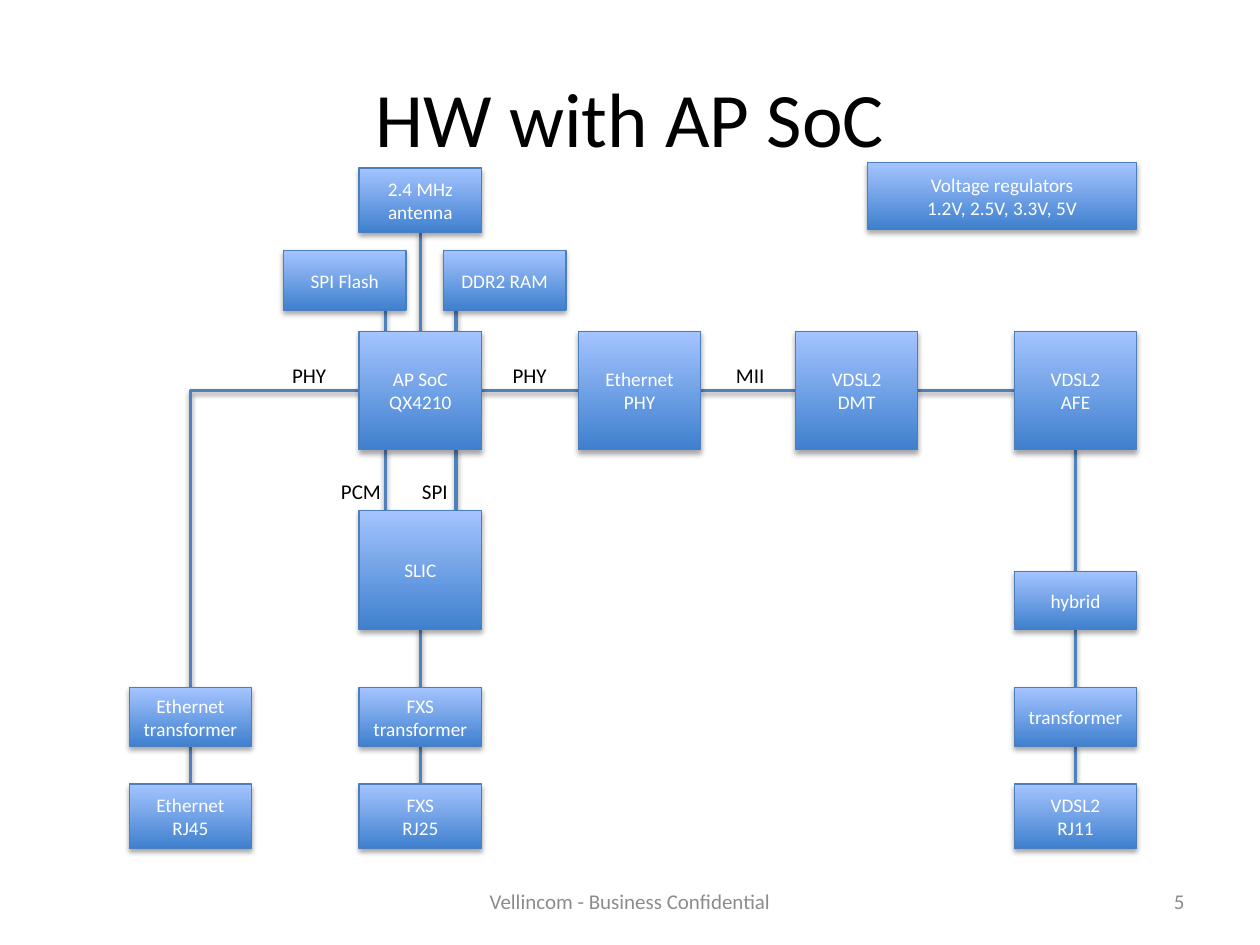
"""Build the hardware block diagram slide for the AP SoC design."""
from dataclasses import dataclass
from typing import Any

from lxml import etree
from pptx import Presentation
from pptx.dml.color import RGBColor
from pptx.enum.shapes import MSO_CONNECTOR, MSO_SHAPE
from pptx.enum.text import MSO_ANCHOR, PP_ALIGN
from pptx.oxml.ns import qn
from pptx.util import Pt

RECTANGLE = MSO_SHAPE.RECTANGLE
STRAIGHT, ELBOW = MSO_CONNECTOR.STRAIGHT, MSO_CONNECTOR.ELBOW
TOP, MIDDLE = MSO_ANCHOR.TOP, MSO_ANCHOR.MIDDLE
CENTER, RIGHT = PP_ALIGN.CENTER, PP_ALIGN.RIGHT


@dataclass(frozen=True)
class Theme:
    """Colours, font and type sizes of the slide."""
    font: str = "Calibri"
    ink: str = "000000"
    muted: str = "8C8C8C"
    box_text: str = "FFFFFF"
    box_bottom: str = "3F80CE"
    box_top: str = "A4C4FF"
    box_line: str = "4B7EBC"
    wire: str = "4F81BD"
    title_size: float = 44
    label_size: float = 12
    box_size: float = 11
    box_line_width: float = 0.75
    wire_width: float = 2


@dataclass(frozen=True)
class Block:
    """A hardware block with its place in points."""
    text: str
    left: float
    top: float
    height: float
    width: float = 70

    @property
    def right(self) -> float:
        """Return the right edge."""
        return self.left + self.width

    @property
    def bottom(self) -> float:
        """Return the lower edge."""
        return self.top + self.height

    @property
    def center(self) -> float:
        """Return the horizontal centre."""
        return self.left + self.width / 2

    @property
    def middle(self) -> float:
        """Return the vertical centre."""
        return self.top + self.height / 2


@dataclass(frozen=True)
class Caption:
    """A plain text with its place and look."""
    text: str
    left: float
    top: float
    width: float = 41
    height: float = 21.8
    size: float = 12
    color: str = "000000"
    align: Any = CENTER
    anchor: Any = TOP


THEME = Theme()
CHIP, PART, JACK = 67.8, 33.3, 37
LAN, SOC, PHY, DMT, LINE = 73.8, 205.2, 330.5, 454.5, 579.6
CHIP_ROW, SLIC_ROW, HYBRID_ROW, PART_ROW, JACK_ROW = 189.3, 291.8, 326.4, 393, 448
MEMORY_ROW, MEMORY = 143.2, 34
BUS_LEFT, BUS_RIGHT = 220.4, 260.7

BLOCKS = {
    "dmt": Block("VDSL2\nDMT", DMT, CHIP_ROW, CHIP),
    "afe": Block("VDSL2\nAFE", LINE, CHIP_ROW, CHIP),
    "phy": Block("Ethernet PHY", PHY, CHIP_ROW, CHIP),
    "soc": Block("AP SoC\nQX4210", SOC, CHIP_ROW, CHIP),
    "slic": Block("SLIC", SOC, SLIC_ROW, CHIP),
    "antenna": Block("2.4 MHz\nantenna", SOC, 96, JACK),
    "flash": Block("SPI Flash", 162, MEMORY_ROW, MEMORY),
    "ram": Block("DDR2 RAM", 253.4, MEMORY_ROW, MEMORY),
    "hybrid": Block("hybrid", LINE, HYBRID_ROW, PART),
    "lan transformer": Block("Ethernet transformer", LAN, PART_ROW, PART),
    "fxs transformer": Block("FXS\ntransformer", SOC, PART_ROW, PART),
    "transformer": Block("transformer", LINE, PART_ROW, PART),
    "lan jack": Block("Ethernet\nRJ45", LAN, JACK_ROW, JACK),
    "fxs jack": Block("FXS\nRJ25", SOC, JACK_ROW, JACK),
    "line jack": Block("VDSL2\nRJ11", LINE, JACK_ROW, JACK),
    "power": Block("Voltage regulators\n1.2V, 2.5V, 3.3V, 5V", 495.6, 93, 38, 154),
}
ACROSS = [("soc", "phy"), ("phy", "dmt"), ("dmt", "afe")]
DOWN = [
    ("antenna", "soc", None), ("flash", "soc", BUS_LEFT), ("ram", "soc", BUS_RIGHT),
    ("soc", "slic", BUS_LEFT), ("soc", "slic", BUS_RIGHT),
    ("slic", "fxs transformer", None), ("fxs transformer", "fxs jack", None),
    ("lan transformer", "lan jack", None), ("afe", "hybrid", None),
    ("hybrid", "transformer", None), ("transformer", "line jack", None),
]
CAPTIONS = [
    Caption("HW with AP SoC", 36, 21.6, 648, 90, THEME.title_size, THEME.ink, CENTER, MIDDLE),
    Caption("PHY", 156.2, 203.8), Caption("PHY", 282.2, 203.8), Caption("MII", 408.2, 203.8),
    Caption("PCM", 185.8, 270), Caption("SPI", 228, 270),
    Caption("Vellincom - Business Confidential", 246, 500.5, 228, 28.8,
            THEME.label_size, THEME.muted, CENTER, MIDDLE),
    Caption("5", 516, 500.5, 168, 28.8, THEME.label_size, THEME.muted, RIGHT, MIDDLE),
]


def apply(target: Any, values: dict[str, Any]) -> None:
    """Set every attribute of a format dict on the target."""
    for name, value in values.items():
        setattr(target, name, value)


def write(shape: Any, text: str, size: float, color: str, align: Any, anchor: Any) -> None:
    """Fill a shape with one paragraph per line of text."""
    frame = shape.text_frame
    apply(frame, {"word_wrap": True, "vertical_anchor": anchor, "text": text})
    for para in frame.paragraphs:
        para.alignment = align
        for span in para.runs:
            apply(span.font, {"name": THEME.font, "size": Pt(size), "bold": False})
            span.font.color.rgb = RGBColor.from_string(color)


def outline(shape: Any, color: str, width: float) -> None:
    """Give a shape or wire its line."""
    shape.line.color.rgb = RGBColor.from_string(color)
    shape.line.width = Pt(width)


def add_shadow(properties: Any, distance: float, alpha: int) -> None:
    """Append a soft downward shadow to shape properties."""
    effects = etree.SubElement(properties, qn("a:effectLst"))
    shadow = etree.SubElement(effects, qn("a:outerShdw"), blurRad=str(Pt(3.1)),
                              dist=str(Pt(distance)), dir="5400000", rotWithShape="0")
    tint = etree.SubElement(shadow, qn("a:srgbClr"), val=THEME.ink)
    etree.SubElement(tint, qn("a:alpha"), val=str(alpha * 1000))


def draw_wire(page: Any, x1: float, y1: float, x2: float, y2: float, kind: Any = STRAIGHT) -> Any:
    """Draw a connector between two points."""
    wire = page.shapes.add_connector(kind, Pt(x1), Pt(y1), Pt(x2), Pt(y2))
    outline(wire, THEME.wire, THEME.wire_width)
    add_shadow(wire._element.spPr, 1.6, 38)
    return wire


def draw_corner(page: Any, start: Block, end: Block) -> None:
    """Draw a wire that rises from the start and turns right to the end."""
    rise, run = start.top - end.middle, end.left - start.center
    left = (start.center + end.left - rise) / 2
    top = (start.top + end.middle - run) / 2
    properties = draw_wire(page, left, top, left + rise, top + run, ELBOW)._element.spPr
    properties.find(qn("a:prstGeom")).set("prst", "bentConnector2")
    for name, value in {"rot": "5400000", "flipH": "1", "flipV": "1"}.items():
        properties.find(qn("a:xfrm")).set(name, value)


def draw_block(page: Any, block: Block) -> None:
    """Draw a shaded hardware block with its name."""
    box = page.shapes.add_shape(RECTANGLE, Pt(block.left), Pt(block.top),
                                Pt(block.width), Pt(block.height))
    box.fill.gradient()
    box.fill.gradient_angle = 90
    for stop, color in zip(box.fill.gradient_stops, (THEME.box_bottom, THEME.box_top)):
        stop.color.rgb = RGBColor.from_string(color)
    outline(box, THEME.box_line, THEME.box_line_width)
    add_shadow(box._element.spPr, 1.8, 35)
    write(box, block.text, THEME.box_size, THEME.box_text, CENTER, MIDDLE)


def draw_caption(page: Any, item: Caption) -> None:
    """Draw a plain text box."""
    box = page.shapes.add_textbox(Pt(item.left), Pt(item.top), Pt(item.width), Pt(item.height))
    write(box, item.text, item.size, item.color, item.align, item.anchor)


def main() -> None:
    """Build and save the deck."""
    deck = Presentation()
    apply(deck, {"slide_width": Pt(720), "slide_height": Pt(540)})
    page = deck.slides.add_slide(deck.slide_layouts[6])
    for first, second in ACROSS:
        start, end = BLOCKS[first], BLOCKS[second]
        draw_wire(page, start.right, start.middle, end.left, end.middle)
    for first, second, bus in DOWN:
        start, end = BLOCKS[first], BLOCKS[second]
        x = bus or start.center
        draw_wire(page, x, start.bottom, x, end.top)
    draw_corner(page, BLOCKS["lan transformer"], BLOCKS["soc"])
    for block in BLOCKS.values():
        draw_block(page, block)
    for item in CAPTIONS:
        draw_caption(page, item)
    deck.save("out.pptx")


if __name__ == "__main__":
    main()
